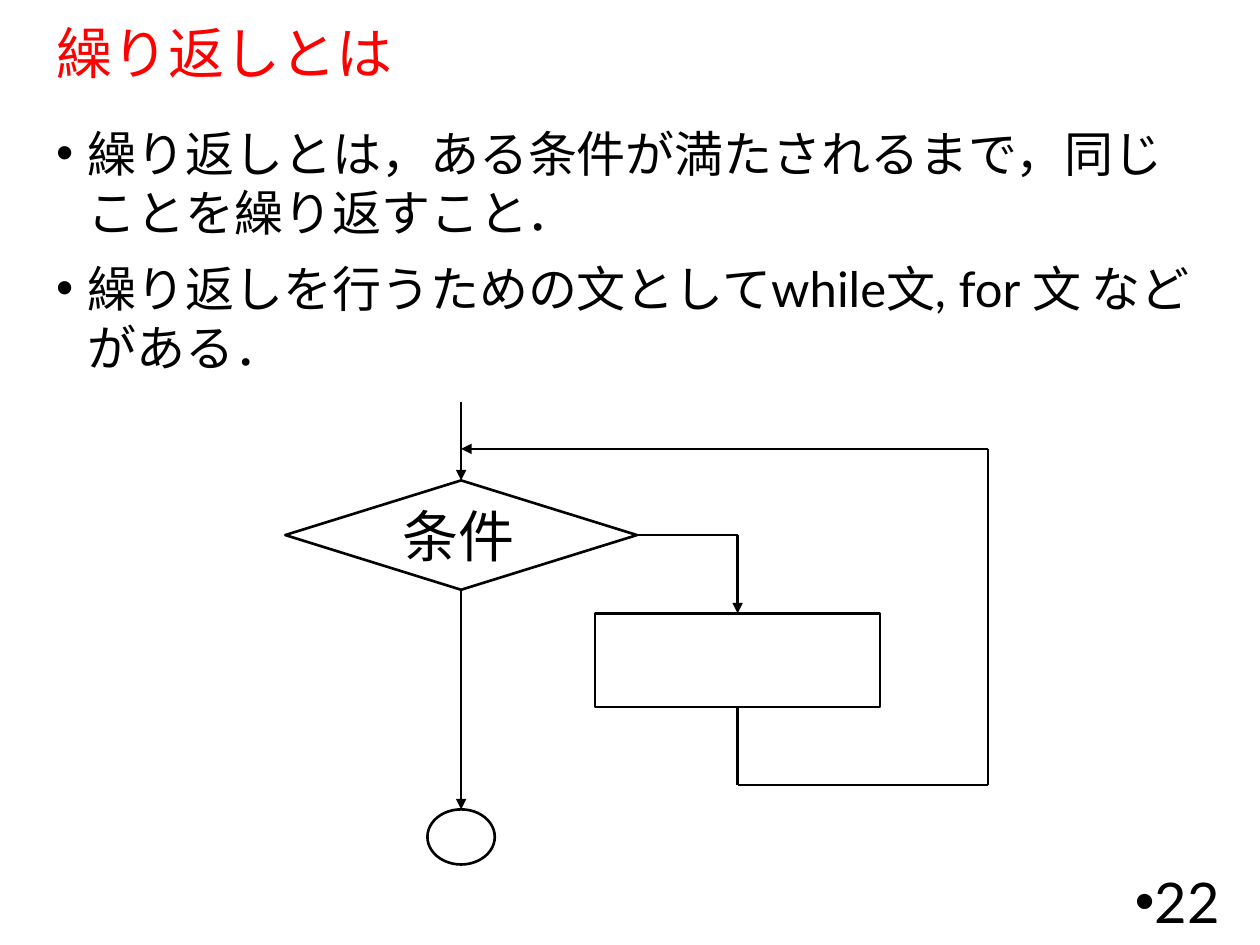
from pptx import Presentation
from pptx.dml.color import RGBColor
from pptx.enum.shapes import MSO_CONNECTOR, MSO_SHAPE as SHAPE
from pptx.enum.text import MSO_ANCHOR as ANCHOR, PP_ALIGN as ALIGN
from pptx.oxml.ns import qn
from pptx.util import Pt
from lxml.etree import SubElement

# Content
TITLE = "繰り返しとは"
POINTS = [
    "繰り返しとは，ある条件が満たされるまで，同じことを繰り返すこと．",
    "繰り返しを行うための文としてwhile文, for 文 などがある．",
]
CONDITION = "条件"
PAGE = "22"

THEME = {
    "font": "Lato", "large": 32, "body": 28, "line": 1.5,
    "title": RGBColor(0xFF, 0, 0), "ink": RGBColor(0, 0, 0),
}
TOP, BOTTOM, RIGHT = 0, 2, 3  # connection sites

# Flowchart geometry in points
AXIS_X, BODY_X, LOOP_X = 263.5, 421.5, 564.5
START_Y, MERGE_Y, RETURN_Y = 229.5, 256.5, 448.5
NODES = {  # name: preset, centre x, top, width, height
    "body": (SHAPE.RECTANGLE, BODY_X, 350.5, 163, 53.5),
    "decision": (SHAPE.FLOWCHART_DECISION, AXIS_X, 274.5, 201, 62.5),
    "end": (SHAPE.FLOWCHART_CONNECTOR, AXIS_X, 462.5, 38.5, 31.5),
}
DECISION_Y = 274.5 + 62.5 / 2
# Each end is a point or a (node, site) pair; the last value asks for an arrowhead
LINES = [
    (("decision", BOTTOM), ("end", TOP), True),
    ((AXIS_X, START_Y), ("decision", TOP), True),
    (("decision", RIGHT), (BODY_X, DECISION_Y), False),
    ((BODY_X, DECISION_Y), ("body", TOP), True),
    (("body", BOTTOM), (BODY_X, RETURN_Y), False),
    ((BODY_X, RETURN_Y), (LOOP_X, RETURN_Y), False),
    ((LOOP_X, RETURN_Y), (LOOP_X, MERGE_Y), False),
    ((LOOP_X, MERGE_Y), (AXIS_X, MERGE_Y), True),
]

prs = Presentation()
prs.slide_width, prs.slide_height = Pt(720), Pt(540)
shapes = prs.slides.add_slide(prs.slide_layouts[6]).shapes


def add_text(box, texts, size, color="ink", anchor=ANCHOR.TOP, wrap=True,
             bullet=False, indent=0, align=ALIGN.LEFT, spacing=1.0, gap=0):
    tf = shapes.add_textbox(*map(Pt, box)).text_frame
    tf.word_wrap, tf.vertical_anchor = wrap, anchor
    for i, text in enumerate(texts):
        p = tf.paragraphs[0] if i == 0 else tf.add_paragraph()
        p.alignment, p.line_spacing = align, spacing
        if i:
            p.space_before = Pt(gap)
        if bullet:
            pPr = p._p.get_or_add_pPr()
            pPr.set("marL", str(Pt(indent)))
            pPr.set("indent", str(-Pt(indent)))
            SubElement(pPr, qn("a:buFont"), typeface="Arial")
            SubElement(pPr, qn("a:buChar"), char="•")
        r = p.add_run()
        r.text = text
        r.font.name, r.font.size = THEME["font"], Pt(THEME[size])
        r.font.color.rgb = THEME[color]


def style_line(line):
    line.color.rgb, line.width = THEME["ink"], Pt(THEME["line"])


# Title, bullet points and page number
add_text((25, 13.5, 666, 37), [TITLE], "large", "title", ANCHOR.MIDDLE, spacing=0.9)
add_text((25, 67, 666, 420), POINTS, "body", bullet=True, indent=18, gap=10)
add_text((542, 500.5, 162, 29), [PAGE], "large", anchor=ANCHOR.MIDDLE,
         bullet=True, align=ALIGN.RIGHT)

# Flowchart nodes
nodes = {}
for name, (preset, cx, top, w, h) in NODES.items():
    sp = shapes.add_shape(preset, Pt(cx - w / 2), Pt(top), Pt(w), Pt(h))
    sp.shadow.inherit = False
    sp.fill.background()
    style_line(sp.line)
    nodes[name] = sp

# Flow lines
for start, end, arrow in LINES:
    points = [(0, 0) if e[0] in nodes else e for e in (start, end)]
    cn = shapes.add_connector(MSO_CONNECTOR.STRAIGHT,
                              *(Pt(v) for point in points for v in point))
    for e, join in ((start, cn.begin_connect), (end, cn.end_connect)):
        if e[0] in nodes:
            join(nodes[e[0]], e[1])
    style_line(cn.line)
    if arrow:
        SubElement(cn.line._get_or_add_ln(), qn("a:tailEnd"), type="triangle")
    SubElement(cn._element.spPr, qn("a:effectLst"))

# Condition label
add_text((223, 283, 78.5, 45.5), [CONDITION], "large", wrap=False)

prs.save("out.pptx")
